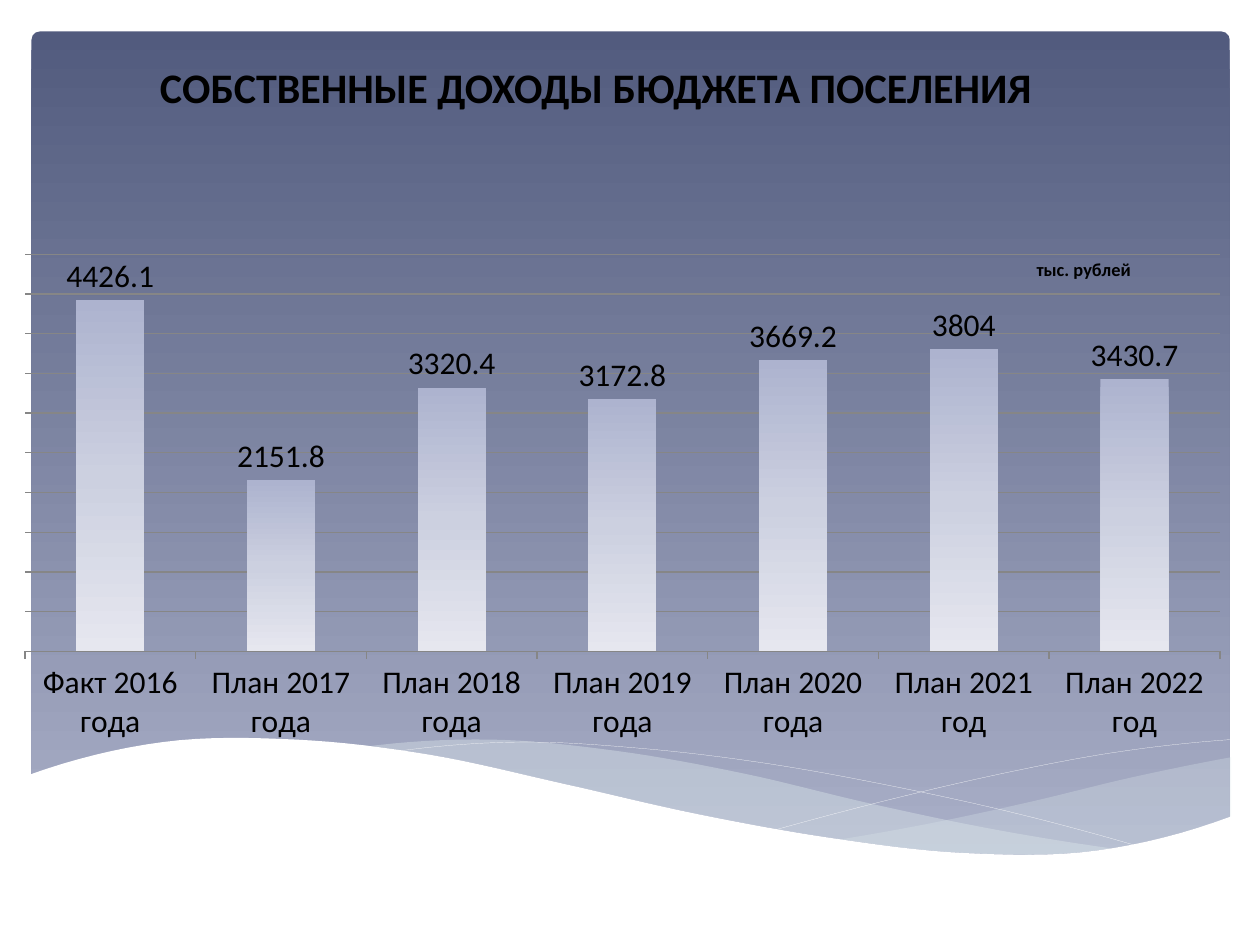
"""Build a slide with a column chart of the settlement's own budget revenues."""
import pptx
import pptx.chart.data
import pptx.dml.color
import pptx.enum.chart
import pptx.enum.shapes
import pptx.enum.text
import pptx.oxml
import pptx.oxml.ns
import pptx.util
from pptx.util import Inches

COLORS = {
    "text": "000000", "white": "FFFFFF", "mist": "DDE9EC", "grid": "868686",
    "sky_top": "525B7E", "sky_bottom": "AAB0C8",
    "bar_top": "ADB3CF", "bar_middle": "CCD0E0", "bar_bottom": "E6E7EF",
}
RGB = {name: pptx.dml.color.RGBColor.from_string(value) for name, value in COLORS.items()}
STEPS_PER_SPAN = 8
qn = pptx.oxml.ns.qn


def fill_downward(fill, properties, names):
    """Fill with an evenly spaced gradient running from top to bottom."""
    fill.gradient()
    fill.gradient_angle = 270
    stops = properties.find(".//" + qn("a:gsLst"))
    for stop in list(stops):
        stops.remove(stop)
    for index, name in enumerate(names):
        position = round(100000 * index / (len(names) - 1))
        stops.append(pptx.oxml.parse_xml(
            f'<a:gs {pptx.oxml.ns.nsdecls("a")} pos="{position}">'
            f'<a:srgbClr val="{COLORS[name]}"/></a:gs>'))


def smooth_crest(left, right, heights):
    """Return points of a Catmull-Rom curve through heights at equal steps from left to right."""
    before = 3 * heights[0] - 3 * heights[1] + heights[2]
    after = 3 * heights[-1] - 3 * heights[-2] + heights[-3]
    knots = [before, *heights, after]
    spans = len(heights) - 1
    points = []
    for span in range(spans):
        a, b, c, d = knots[span:span + 4]
        for step in range(STEPS_PER_SPAN):
            t = step / STEPS_PER_SPAN
            y = b + t * (c - a + t * (2 * a - 5 * b + 4 * c - d + t * (3 * b - a - 3 * c + d))) / 2
            points.append((left + (right - left) * (span + t) / spans, y))
    return points + [(right, heights[-1])]


presentation = pptx.Presentation()
presentation.slide_width = Inches(10)
presentation.slide_height = Inches(7.5)
slide = presentation.slides.add_slide(presentation.slide_layouts[6])

sky = slide.shapes.add_shape(
    pptx.enum.shapes.MSO_SHAPE.ROUNDED_RECTANGLE,
    Inches(0.25), Inches(0.25), Inches(9.51), Inches(6.6))
sky.adjustments[0] = 0.01
sky.shadow.inherit = False
sky.line.fill.background()
fill_downward(sky.fill, sky._element.spPr, ["sky_top", "sky_bottom"])

front_left, front_right, floor = 0.23, 9.77, 7.31
front_crest = smooth_crest(
    front_left, front_right,
    [6.15, 5.89, 5.87, 5.99, 6.22, 6.46, 6.65, 6.77, 6.75, 6.48])
right_crest = smooth_crest(6.62, front_right, [6.67, 6.53, 6.36, 6.17, 6.01])
middle_crest = smooth_crest(2.87, 8.94, [5.93, 5.87, 5.96, 6.14, 6.38, 6.59, 6.75])
falling_curve = smooth_crest(3.1, 9.08, [5.97, 5.89, 5.94, 6.06, 6.24, 6.46, 6.73])
rising_curve = smooth_crest(6.14, 9.76, [6.59, 6.35, 6.14, 5.97, 5.87])

right_wave, middle_wave = [
    crest + [point for point in reversed(front_crest) if crest[0][0] < point[0] <= crest[-1][0]]
    for crest in (right_crest, middle_crest)
]
front_wave = front_crest + [(front_right, floor), (front_left, floor)]

for points, color, opacity in [
    (right_wave, "mist", 29), (middle_wave, "mist", 40),
    (falling_curve, None, None), (rising_curve, None, None),
    (front_wave, "white", 100),
]:
    corners = [(Inches(x), Inches(y)) for x, y in points]
    outline = slide.shapes.build_freeform(*corners[0])
    outline.add_line_segments(corners[1:], close=color is not None)
    wave = outline.convert_to_shape()
    wave.shadow.inherit = False
    if color is None:
        wave.fill.background()
        wave.line.color.rgb = RGB["white"]
        wave.line.width = pptx.util.Pt(0.1)
    else:
        wave.line.fill.background()
        wave.fill.solid()
        wave.fill.fore_color.rgb = RGB[color]
        tint = wave._element.spPr.find(qn("a:solidFill")).find(qn("a:srgbClr"))
        tint.append(pptx.oxml.parse_xml(
            f'<a:alpha {pptx.oxml.ns.nsdecls("a")} val="{opacity * 1000}"/>'))

heading = slide.shapes.add_textbox(Inches(0.28), Inches(0.44), Inches(8.9), Inches(0.5)).text_frame
heading.word_wrap = True
heading.auto_size = pptx.enum.text.MSO_AUTO_SIZE.SHAPE_TO_FIT_TEXT
heading.text = "СОБСТВЕННЫЕ ДОХОДЫ БЮДЖЕТА ПОСЕЛЕНИЯ"
heading.paragraphs[0].alignment = pptx.enum.text.PP_ALIGN.CENTER

revenue_by_year = {
    "Факт 2016 года": 4426.1, "План 2017 года": 2151.8, "План 2018 года": 3320.4,
    "План 2019 года": 3172.8, "План 2020 года": 3669.2, "План 2021 год": 3804,
    "План 2022 год": 3430.7,
}
revenues = pptx.chart.data.CategoryChartData()
revenues.categories = list(revenue_by_year)
revenues.add_series("Series 1", list(revenue_by_year.values()))
chart = slide.shapes.add_chart(
    pptx.enum.chart.XL_CHART_TYPE.COLUMN_CLUSTERED,
    Inches(0), Inches(1.53), Inches(9.88), Inches(4.44), revenues).chart
chart.has_legend = False
chart.has_title = True
unit = chart.chart_title.text_frame
unit.text = "тыс. рублей"

plot = chart.plots[0]
plot.has_data_labels = True
bars = plot.series[0]
fill_downward(bars.format.fill, bars._element, ["bar_top", "bar_middle", "bar_bottom"])

for part, settings in [
    (plot, {"gap_width": 150, "vary_by_categories": False}),
    (plot.data_labels, {
        "show_value": True, "number_format": "General", "number_format_is_linked": False,
        "position": pptx.enum.chart.XL_LABEL_POSITION.OUTSIDE_END}),
    (chart.value_axis, {
        "minimum_scale": 0, "maximum_scale": 5000, "major_unit": 500,
        "has_major_gridlines": True, "visible": False}),
    (chart.category_axis, {"major_tick_mark": pptx.enum.chart.XL_TICK_MARK.OUTSIDE}),
]:
    for name, value in settings.items():
        setattr(part, name, value)

for line in (chart.value_axis.major_gridlines.format.line, chart.category_axis.format.line):
    line.color.rgb = RGB["grid"]
    line.width = pptx.util.Pt(0.75)

for font, size, bold in [
    (heading.paragraphs[0].runs[0].font, 24, True),
    (chart.font, 18, False),
    (plot.data_labels.font, 18, False),
    (unit.paragraphs[0].runs[0].font, 10.5, True),
]:
    for name, value in {"name": "Calibri", "size": pptx.util.Pt(size), "bold": bold}.items():
        setattr(font, name, value)
    font.color.rgb = RGB["text"]

plot_area = chart._chartSpace.chart.plotArea
for owner, index, target, frame in [
    (plot_area, 0, '<c:layoutTarget val="inner"/>', {"x": 0.02, "y": 0.11, "w": 0.96, "h": 0.71}),
    (chart.chart_title._element, 1, "", {"x": 0.83, "y": 0.11}),
]:
    for old_layout in owner.findall(qn("c:layout")):
        owner.remove(old_layout)
    modes = "".join(f'<c:{side}Mode val="edge"/>' for side in "xy")
    sizes = "".join(f'<c:{side} val="{share}"/>' for side, share in frame.items())
    owner.insert(index, pptx.oxml.parse_xml(
        f'<c:layout {pptx.oxml.ns.nsdecls("c")}><c:manualLayout>'
        f"{target}{modes}{sizes}</c:manualLayout></c:layout>"))

presentation.save("out.pptx")
